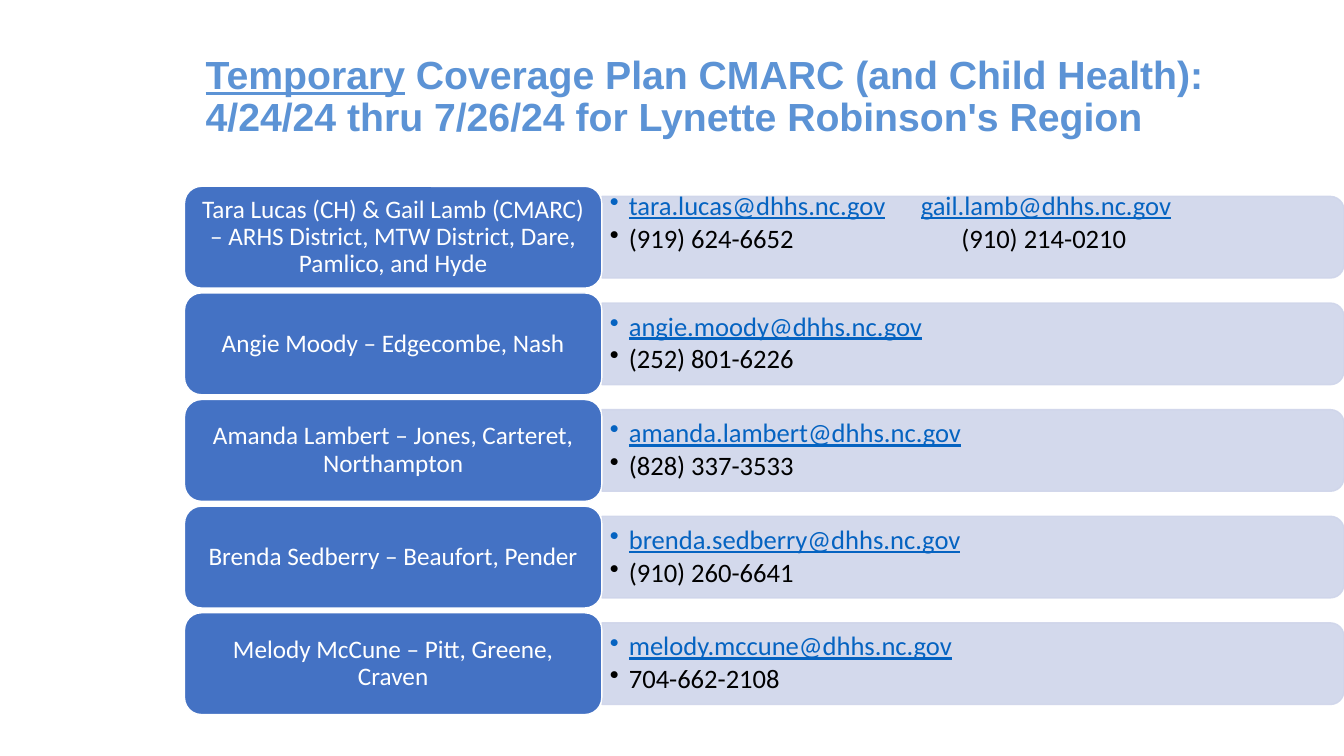
from dataclasses import dataclass

from lxml import etree
from pptx import Presentation
from pptx.dml.color import RGBColor
from pptx.enum.shapes import MSO_SHAPE
from pptx.enum.text import MSO_ANCHOR, MSO_AUTO_SIZE, PP_ALIGN
from pptx.oxml.ns import qn
from pptx.util import Pt

ROUNDED = MSO_SHAPE.ROUNDED_RECTANGLE
ROUNDED_TOP = MSO_SHAPE.ROUND_2_SAME_RECTANGLE
TOP, MIDDLE = MSO_ANCHOR.TOP, MSO_ANCHOR.MIDDLE
LEFT, CENTER = PP_ALIGN.LEFT, PP_ALIGN.CENTER
NO_AUTOFIT = MSO_AUTO_SIZE.NONE

TITLE_BLUE = RGBColor(0x5C, 0x93, 0xD5)
LABEL_BLUE = RGBColor(0x44, 0x72, 0xC4)
PANEL_BLUE = RGBColor(0xCF, 0xD5, 0xEA)
LINK_BLUE = RGBColor(0x05, 0x63, 0xC1)
WHITE = RGBColor(0xFF, 0xFF, 0xFF)
BLACK = RGBColor(0, 0, 0)

FIRST_TOP, ROW_PITCH = 133.1, 76.15
LABEL_LEFT, LABEL_WIDTH, LABEL_HEIGHT = 131.8, 298.1, 72.7
PANEL_LEFT, PANEL_WIDTH, PANEL_HEIGHT = 430, 530, 58.3
CONTACT_WIDTH, CONTACT_HEIGHT = 527, 52.6
BULLET_INDENT = 13.5


@dataclass(frozen=True)
class Coverage:
    region: str
    emails: tuple[str, ...]
    phones: tuple[str, ...]
    email_tab: float = 0
    phone_tab: float = 0
    bottom_inset: float = 3


COVERAGES = (
    Coverage("Tara Lucas (CH) & Gail Lamb (CMARC) – ARHS District, MTW District, "
             "Dare, Pamlico, and Hyde",
             ("tara.lucas@dhhs.nc.gov", "gail.lamb@dhhs.nc.gov"),
             ("(919) 624-6652", "(910) 214-0210"), 222, 251, 23),
    Coverage("Angie Moody – Edgecombe, Nash",
             ("angie.moody@dhhs.nc.gov",), ("(252) 801-6226",)),
    Coverage("Amanda Lambert – Jones, Carteret, Northampton",
             ("amanda.lambert@dhhs.nc.gov",), ("(828) 337-3533",)),
    Coverage("Brenda Sedberry – Beaufort, Pender",
             ("brenda.sedberry@dhhs.nc.gov",), ("(910) 260-6641",)),
    Coverage("Melody McCune – Pitt, Greene, Craven",
             ("melody.mccune@dhhs.nc.gov",), ("704-662-2108",)),
)


def add_run(paragraph, text: str, size: float, color: RGBColor,
            font: str = "Calibri", bold: bool = False, underline: bool = False) -> None:
    run = paragraph.add_run()
    run.text = text
    run.font.name, run.font.size = font, Pt(size)
    run.font.bold, run.font.underline = bold, underline
    run.font.color.rgb = color


def set_frame(frame, anchor, side: float, top: float, bottom: float) -> None:
    frame.word_wrap = True
    frame.auto_size = NO_AUTOFIT
    frame.vertical_anchor = anchor
    frame.margin_left = frame.margin_right = Pt(side)
    frame.margin_top, frame.margin_bottom = Pt(top), Pt(bottom)


def add_box(slide, kind, left: float, top: float, width: float, height: float,
            fill: RGBColor, line: RGBColor):
    box = slide.shapes.add_shape(kind, Pt(left), Pt(top), Pt(width), Pt(height))
    box.shadow.inherit = False
    box.fill.solid()
    box.fill.fore_color.rgb = fill
    box.line.color.rgb = line
    box.line.width = Pt(1)
    return box


def add_title(slide) -> None:
    title = slide.shapes.title
    title.left, title.top, title.width, title.height = Pt(139.7), Pt(36), Pt(791.3), Pt(43.2)
    set_frame(title.text_frame, TOP, 7.2, 3.6, 3.6)
    heading = title.text_frame.paragraphs[0]
    heading.alignment = LEFT
    heading.line_spacing = 0.9
    add_run(heading, "Temporary", 28, TITLE_BLUE, "Arial", True, True)
    add_run(heading, " Coverage Plan CMARC (and Child Health): 4/24/24 thru 7/26/24 "
            "for Lynette Robinson's Region", 28, TITLE_BLUE, "Arial", True)


def add_panel(slide, middle: float) -> None:
    """Draw the pale bar, turned so that its rounded end faces right."""
    center = PANEL_LEFT + PANEL_WIDTH / 2
    panel = add_box(slide, ROUNDED_TOP, center - PANEL_HEIGHT / 2, middle - PANEL_WIDTH / 2,
                    PANEL_HEIGHT, PANEL_WIDTH, PANEL_BLUE, PANEL_BLUE)
    panel.rotation = 90
    for color in panel.element.spPr.iter(qn("a:srgbClr")):
        etree.SubElement(color, qn("a:alpha"), val="90000")


def format_bullet(paragraph, tab: float) -> None:
    properties = paragraph._p.get_or_add_pPr()
    properties.set("marL", str(Pt(BULLET_INDENT)))
    properties.set("indent", str(-Pt(BULLET_INDENT)))
    etree.SubElement(properties, qn("a:buChar"), char="•")
    if tab:
        tabs = etree.SubElement(properties, qn("a:tabLst"))
        etree.SubElement(tabs, qn("a:tab"), pos=str(Pt(tab)), algn="l")
    paragraph.level = 1
    paragraph.alignment = LEFT
    paragraph.line_spacing = 0.9
    paragraph.space_after = Pt(2.85)


def add_contacts(slide, coverage: Coverage, middle: float) -> None:
    box = slide.shapes.add_textbox(Pt(PANEL_LEFT), Pt(middle - CONTACT_HEIGHT / 2),
                                   Pt(CONTACT_WIDTH), Pt(CONTACT_HEIGHT))
    frame = box.text_frame
    set_frame(frame, MIDDLE, 5.7, 3, coverage.bottom_inset)
    email_line, phone_line = frame.paragraphs[0], frame.add_paragraph()
    format_bullet(email_line, coverage.email_tab)
    format_bullet(phone_line, coverage.phone_tab)
    for index, email in enumerate(coverage.emails):
        if index:
            add_run(email_line, "\t", 19, BLACK)
        add_run(email_line, email, 19, LINK_BLUE, underline=True)
    add_run(phone_line, "\t".join(coverage.phones), 19, BLACK)


def add_label(slide, region: str, top: float) -> None:
    label = add_box(slide, ROUNDED, LABEL_LEFT, top, LABEL_WIDTH, LABEL_HEIGHT,
                    LABEL_BLUE, WHITE)
    set_frame(label.text_frame, MIDDLE, 5.4, 2.7, 2.7)
    paragraph = label.text_frame.paragraphs[0]
    paragraph.alignment = CENTER
    paragraph.line_spacing = 0.9
    add_run(paragraph, region, 18, WHITE)


def main() -> None:
    presentation = Presentation()
    presentation.slide_width, presentation.slide_height = Pt(960), Pt(540)
    slide = presentation.slides.add_slide(presentation.slide_layouts.get_by_name("Title Only"))
    add_title(slide)
    for row, coverage in enumerate(COVERAGES):
        top = FIRST_TOP + row * ROW_PITCH
        middle = top + LABEL_HEIGHT / 2
        add_panel(slide, middle)
        add_contacts(slide, coverage, middle)
        add_label(slide, coverage.region, top)
    presentation.save("out.pptx")


if __name__ == "__main__":
    main()
